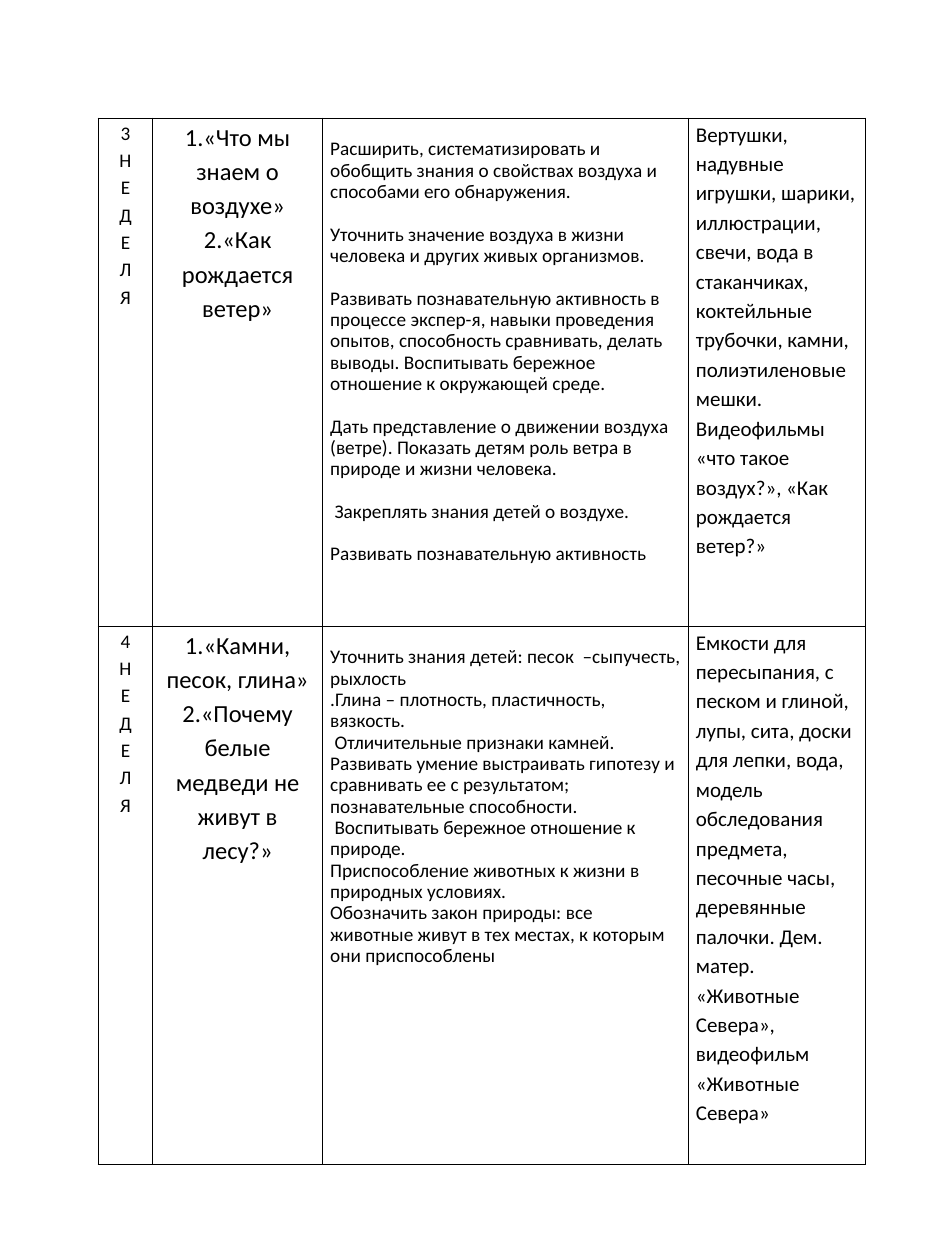
from lxml import etree
from pptx import Presentation
from pptx.dml.color import RGBColor
from pptx.enum.text import PP_ALIGN
from pptx.oxml.ns import qn
from pptx.util import Pt

CENTER = PP_ALIGN.CENTER
LEFT = PP_ALIGN.LEFT
COLORS = {"text": "000000", "border": "000000", "cell": "FFFFFF"}
GOAL_LINE = 12.2

# Column rules: width, text size, alignment, line spacing, top margin
COLUMNS = [
    (31, 11, CENTER, 1.15, 0),
    (97.2, 14, CENTER, 1.15, 0),
    (209, 11, LEFT, Pt(GOAL_LINE), GOAL_LINE),
    (101.3, 12, LEFT, 1.15, 0),
]

# Each week: row height, gap between goals, cell paragraphs
WEEKS = [
    (290.3, GOAL_LINE, [
        list("3НЕДЕЛЯ"),
        ["1.«Что мы знаем о воздухе»", "2.«Как рождается ветер»"],
        [
            "Расширить, систематизировать и обобщить знания о свойствах "
            "воздуха и способами его обнаружения.",
            "Уточнить значение воздуха в жизни человека и других живых "
            "организмов.",
            "Развивать познавательную активность в процессе экспер-я, навыки "
            "проведения опытов, способность сравнивать, делать выводы. "
            "Воспитывать бережное отношение к окружающей среде.",
            "Дать представление о движении воздуха (ветре). Показать детям "
            "роль ветра в природе и жизни человека.",
            " Закреплять знания детей о воздухе.",
            "Развивать познавательную активность",
        ],
        ["Вертушки, надувные игрушки, шарики, иллюстрации, свечи, вода в "
         "стаканчиках, коктейльные трубочки, камни, полиэтиленовые мешки. "
         "Видеофильмы «что такое воздух?», «Как рождается ветер?»"],
    ]),
    (307.5, 0, [
        list("4НЕДЕЛЯ"),
        ["1.«Камни, песок, глина»",
         "2.«Почему белые медведи не живут в лесу?»"],
        [
            "Уточнить знания детей: песок  –сыпучесть, рыхлость",
            ".Глина – плотность, пластичность, вязкость.",
            " Отличительные признаки камней. Развивать умение выстраивать "
            "гипотезу и сравнивать ее с результатом; познавательные "
            "способности.",
            " Воспитывать бережное отношение к природе.",
            "Приспособление животных к жизни в природных условиях.",
            "Обозначить закон природы: все животные живут в тех местах, "
            "к которым они приспособлены",
        ],
        ["Емкости для пересыпания, с песком и глиной, лупы, сита, доски для "
         "лепки, вода, модель обследования предмета, песочные часы, "
         "деревянные палочки. Дем. матер. «Животные Севера», видеофильм "
         "«Животные Севера»"],
    ]),
]


class PlanSlide:
    """Holds the style and the current slide."""

    font = "Calibri"
    side_margin = 4.3
    border_width = 1

    def __init__(self, slide):
        self.slide = slide

    def table(self, left, top, columns, weeks):
        width = sum(column[0] for column in columns)
        height = sum(week[0] for week in weeks)
        table = self.slide.shapes.add_table(
            len(weeks), len(columns), Pt(left), Pt(top), Pt(width), Pt(height)
        ).table
        table.first_row = table.horz_banding = False
        for index, column in enumerate(columns):
            table.columns[index].width = Pt(column[0])
        for row, (row_height, goal_gap, cells) in enumerate(weeks):
            table.rows[row].height = Pt(row_height)
            for index, lines in enumerate(cells):
                gap = goal_gap if index == 2 else 0
                self.cell(table.cell(row, index), lines, columns[index], gap)

    def cell(self, cell, lines, column, gap):
        _, size, alignment, line_spacing, top_margin = column
        cell.margin_left = cell.margin_right = Pt(self.side_margin)
        cell.margin_top, cell.margin_bottom = Pt(top_margin), 0
        cell.fill.solid()
        cell.fill.fore_color.rgb = RGBColor.from_string(COLORS["cell"])
        self.borders(cell)
        cell.text_frame.text = "\n".join(lines)
        for index, paragraph in enumerate(cell.text_frame.paragraphs):
            paragraph.alignment = alignment
            paragraph.line_spacing = line_spacing
            paragraph.space_before = Pt(gap if index else 0)
            for run in paragraph.runs:
                run.font.name = self.font
                run.font.size = Pt(size)
                run.font.color.rgb = RGBColor.from_string(COLORS["text"])

    def borders(self, cell):
        # Border lines come before the fill in the cell properties
        properties = cell._tc.get_or_add_tcPr()
        for position, side in enumerate(("lnL", "lnR", "lnT", "lnB")):
            line = etree.Element(qn(f"a:{side}"), w=str(Pt(self.border_width)))
            fill = etree.SubElement(line, qn("a:solidFill"))
            etree.SubElement(fill, qn("a:srgbClr"), val=COLORS["border"])
            properties.insert(position, line)


def main():
    presentation = Presentation()
    presentation.slide_width, presentation.slide_height = Pt(540), Pt(720)
    slide = presentation.slides.add_slide(presentation.slide_layouts[6])

    # Weekly plan
    PlanSlide(slide).table(56.2, 67.6, COLUMNS, WEEKS)

    presentation.save("out.pptx")


if __name__ == "__main__":
    main()
